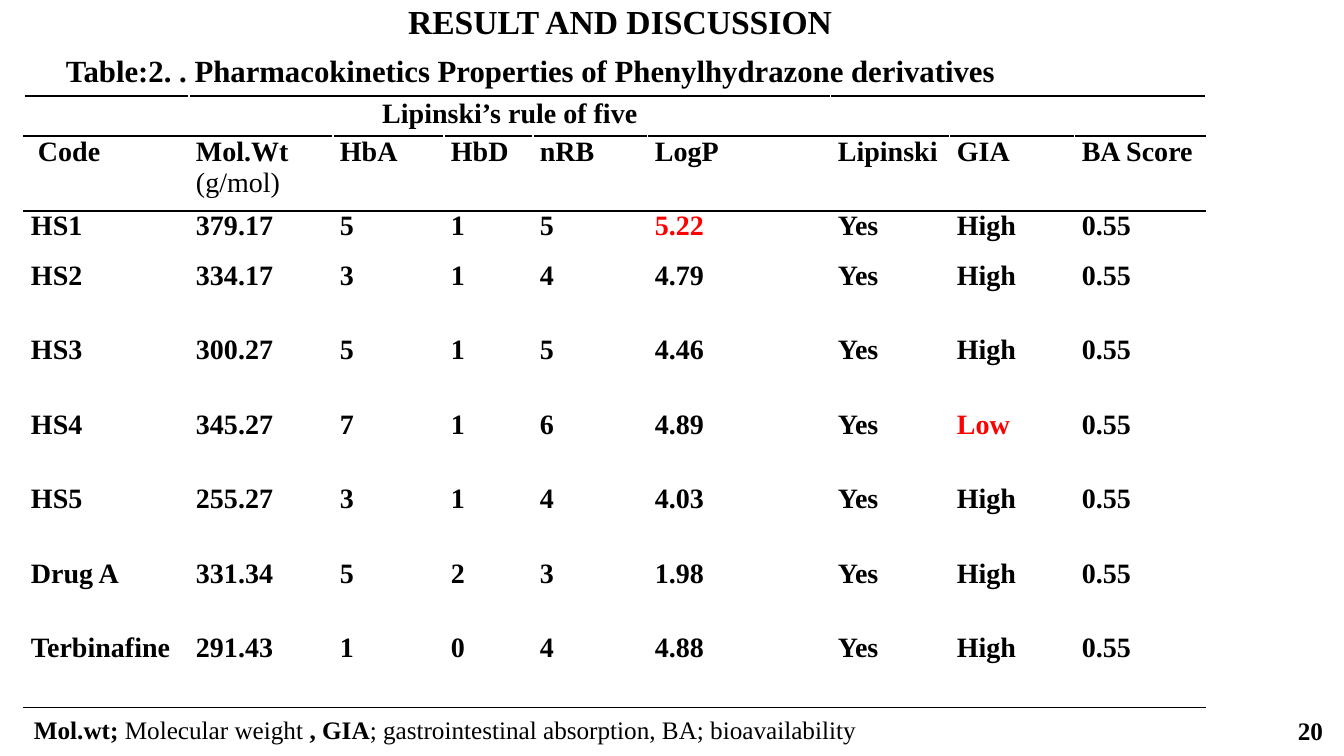
from lxml.etree import SubElement
from pptx import Presentation
from pptx.dml.color import RGBColor
from pptx.enum.text import MSO_ANCHOR, PP_ALIGN
from pptx.oxml.ns import qn
from pptx.util import Pt

COLORS = {"ink": "000000", "alert": "FF0000", "paper": "FFFFFF"}
FONT = "Times New Roman"

TITLE = "RESULT AND DISCUSSION"
CAPTION = "Table:2. . Pharmacokinetics Properties of Phenylhydrazone derivatives"
PAGE_NUMBER = "20"
# Each span is (text, bold)
FOOTNOTE = [
    ("Mol.wt; ", True),
    ("Molecular weight ", False),
    (", GIA", True),
    ("; gastrointestinal absorption, BA; bioavailability", False),
]
GROUP_HEADING = "Lipinski’s rule of five"
HEADINGS = ["\u00a0Code", "Mol.Wt ", "HbA", "HbD", "nRB", "LogP", "Lipinski", "GIA", "BA Score"]
UNIT = "(g/mol)"
COMPOUNDS = [
    ("HS1", "379.17", "5", "1", "5", "5.22", "Yes", "High", "0.55"),
    ("HS2", "334.17", "3", "1", "4", "4.79", "Yes", "High", "0.55"),
    ("HS3", "300.27", "5", "1", "5", "4.46", "Yes", "High", "0.55"),
    ("HS4", "345.27", "7", "1", "6", "4.89", "Yes", "Low", "0.55"),
    ("HS5", "255.27", "3", "1", "4", "4.03", "Yes", "High", "0.55"),
    ("Drug A", "331.34", "5", "2", "3", "1.98", "Yes", "High", "0.55"),
    ("Terbinafine", "291.43", "1", "0", "4", "4.88", "Yes", "High", "0.55"),
]
ALERTS = {"5.22", "Low"}

# Lengths in px
SLIDE = (1344, 756)
TITLE_AT = (321, -4, 598, 50)
CAPTION_AT = (56, 47, 1004, 47)
TABLE_AT = (24, 96)
FOOTNOTE_AT = (24, 709, 871, 40)
NUMBER_AT = (1281, 709, 52, 43)
COLUMN_WIDTHS = [165, 144, 111, 89, 115, 183, 119, 125, 131]
ROW_HEIGHTS = [40, 75, 50] + [74, 75] * 3
CELL_INSET = 7
RULED_LINES = {0, 1, 2, len(ROW_HEIGHTS)}


def px(length):
    return round(length * 914400 / 100.8)


def apply(target, values):
    for name, value in values.items():
        setattr(target, name, value)


def write(frame, spans, size, color="ink", **para_format):
    para = frame.paragraphs[0]
    apply(para, para_format)
    for text, bold in spans:
        span = para.add_run()
        span.text = text
        apply(span.font, {"name": FONT, "size": Pt(size), "bold": bold})
        span.font.color.rgb = RGBColor.from_string(COLORS[color])


def add_text(page, at, spans, size, anchor=MSO_ANCHOR.TOP, **para_format):
    box = page.shapes.add_textbox(*map(px, at))
    apply(box.text_frame, {"word_wrap": True, "vertical_anchor": anchor})
    write(box.text_frame, spans, size, **para_format)


def set_borders(cell, row):
    """Black rules on chosen row edges, white lines elsewhere."""
    top = "ink" if row in RULED_LINES else "paper"
    bottom = "ink" if row + 1 in RULED_LINES else "paper"
    properties = cell._tc.get_or_add_tcPr()
    for side, color in (("L", "paper"), ("R", "paper"), ("T", top), ("B", bottom)):
        line = SubElement(properties, qn(f"a:ln{side}"), w=str(Pt(1)))
        fill = SubElement(line, qn("a:solidFill"))
        SubElement(fill, qn("a:srgbClr"), val=COLORS[color])


def add_properties_table(page):
    width, height = sum(COLUMN_WIDTHS), sum(ROW_HEIGHTS)
    table = page.shapes.add_table(
        len(ROW_HEIGHTS), len(COLUMN_WIDTHS), *map(px, (*TABLE_AT, width, height))
    ).table
    apply(table, {"first_row": False, "horz_banding": False})
    for column, length in zip(table.columns, COLUMN_WIDTHS):
        column.width = px(length)
    for row, length in zip(table.rows, ROW_HEIGHTS):
        row.height = px(length)

    inset = px(CELL_INSET)
    margins = {"margin_left": inset, "margin_right": inset, "margin_top": 0, "margin_bottom": 0}
    for row in range(len(ROW_HEIGHTS)):
        for column in range(len(COLUMN_WIDTHS)):
            cell = table.cell(row, column)
            apply(cell, margins)
            set_borders(cell, row)
            cell.fill.background()

    table.cell(0, 1).merge(table.cell(0, 5))
    table.cell(0, 6).merge(table.cell(0, 8))
    write(table.cell(0, 1).text_frame, [(GROUP_HEADING, True)], 20,
          alignment=PP_ALIGN.CENTER, line_spacing=1.07)
    for row, values in enumerate([HEADINGS, *COMPOUNDS], start=1):
        for column, value in enumerate(values):
            spans = [(value, True)]
            if value == HEADINGS[1]:
                spans.append((UNIT, False))
            color = "alert" if value in ALERTS else "ink"
            write(table.cell(row, column).text_frame, spans, 20, color,
                  alignment=PP_ALIGN.JUSTIFY)


def main():
    deck = Presentation()
    deck.slide_width, deck.slide_height = map(px, SLIDE)
    page = deck.slides.add_slide(deck.slide_layouts[5])

    title = page.shapes.title
    apply(title, dict(zip(("left", "top", "width", "height"), map(px, TITLE_AT))))
    title.text_frame.vertical_anchor = MSO_ANCHOR.TOP
    write(title.text_frame, [(TITLE, True)], 24, alignment=PP_ALIGN.CENTER)

    add_properties_table(page)
    add_text(page, CAPTION_AT, [(CAPTION, True)], 22)
    add_text(page, FOOTNOTE_AT, FOOTNOTE, 18, alignment=PP_ALIGN.JUSTIFY, space_after=Pt(8))
    add_text(page, NUMBER_AT, [(PAGE_NUMBER, True)], 18, MSO_ANCHOR.MIDDLE,
             alignment=PP_ALIGN.RIGHT)
    deck.save("out.pptx")


if __name__ == "__main__":
    main()
